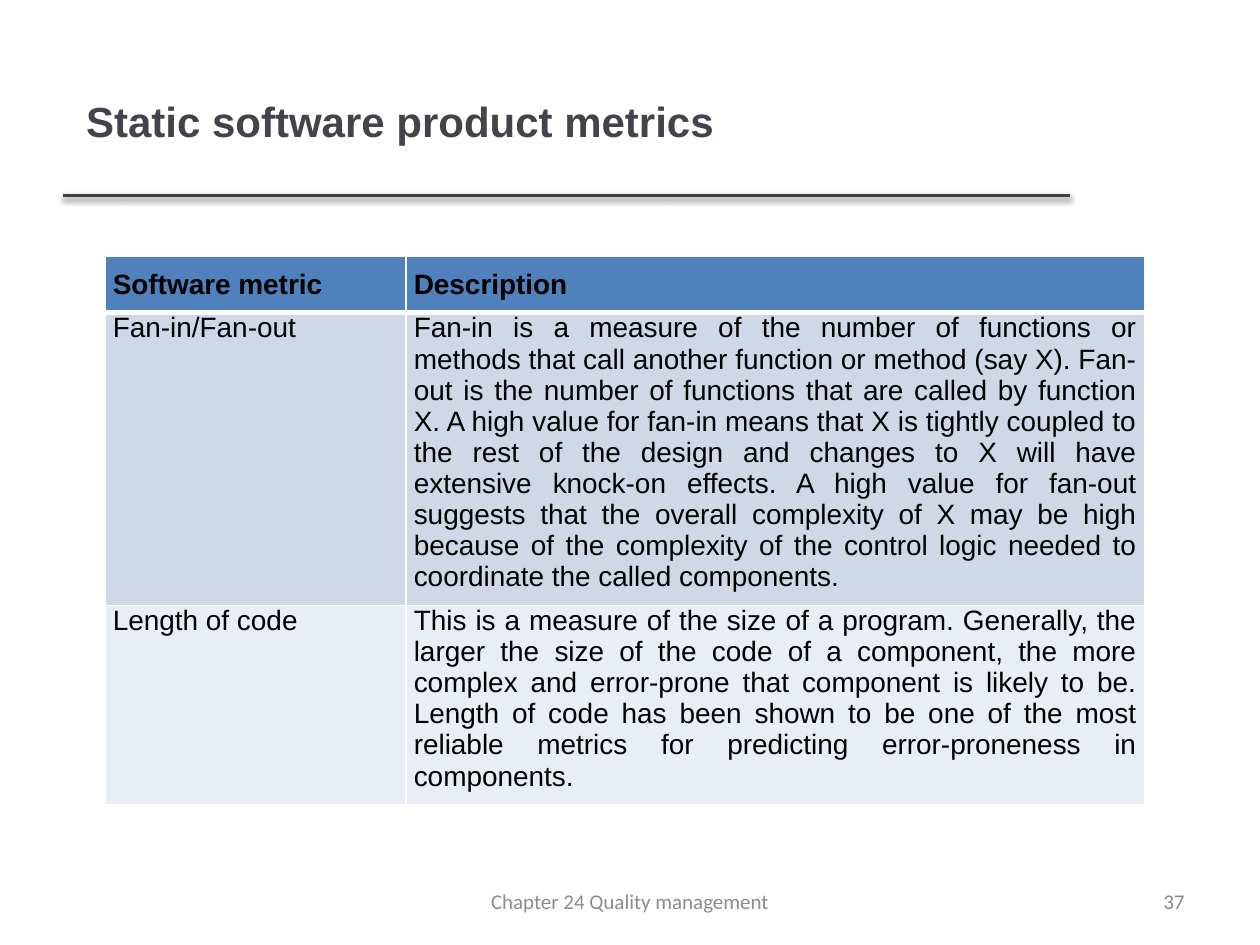
from lxml.etree import SubElement
from pptx import Presentation
from pptx.dml.color import RGBColor
from pptx.enum.shapes import MSO_CONNECTOR as Connector
from pptx.enum.text import MSO_ANCHOR as Anchor, PP_ALIGN as Align
from pptx.oxml.ns import qn
from pptx.util import Pt


def color(code):
    return RGBColor.from_string(code)


class SlideBuilder:
    """Holds the style and the slide, and adds each kind of element."""

    font = "Arial"
    footer_font = "Calibri"
    ink = "000000"
    title_ink = "46424D"
    footer_ink = "8C8C8C"
    rule_ink = "404040"
    border = "FFFFFF"
    row_fills = ("4F81BD", "D0D8E8", "E9EDF4")

    def __init__(self, deck):
        self.slide = deck.slides.add_slide(deck.slide_layouts[5])

    def add_text(self, frame, text, size, font, ink, align, bold=False):
        frame.word_wrap = True
        para = frame.paragraphs[0]
        para.alignment = align
        span = para.add_run()
        span.text = text
        span.font.size = Pt(size)
        span.font.name = font
        span.font.bold = bold
        span.font.color.rgb = color(ink)

    def title(self, text, left, top, width, height):
        box = self.slide.shapes.title
        box.left, box.top, box.width, box.height = map(Pt, (left, top, width, height))
        box.text_frame.vertical_anchor = Anchor.MIDDLE
        self.add_text(box.text_frame, text, 24, self.font, self.title_ink, Align.LEFT, True)

    def rule(self, left, right, top):
        line = self.slide.shapes.add_connector(
            Connector.STRAIGHT, Pt(left), Pt(top), Pt(right), Pt(top))
        line.line.width = Pt(2)
        line.line.color.rgb = color(self.rule_ink)
        effects = SubElement(line._element.spPr, qn("a:effectLst"))
        shadow = SubElement(effects, qn("a:outerShdw"), blurRad=str(Pt(3.1)),
                            dist=str(Pt(1.6)), dir="5400000", rotWithShape="0")
        ink = SubElement(shadow, qn("a:srgbClr"), val="000000")
        SubElement(ink, qn("a:alpha"), val="38000")

    def footer(self, text, left, width, align):
        box = self.slide.shapes.add_textbox(Pt(left), Pt(500.5), Pt(width), Pt(28.75))
        box.text_frame.vertical_anchor = Anchor.MIDDLE
        self.add_text(box.text_frame, text, 12, self.footer_font, self.footer_ink, align)

    def cell_borders(self, cell, bottom):
        properties = cell._tc.get_or_add_tcPr()
        for side, width in (("L", 1), ("R", 1), ("T", 1), ("B", bottom)):
            edge = SubElement(properties, qn(f"a:ln{side}"), w=str(Pt(width)))
            fill = SubElement(edge, qn("a:solidFill"))
            SubElement(fill, qn("a:srgbClr"), val=self.border)

    def table(self, rows, left, top, widths, heights):
        table = self.slide.shapes.add_table(
            len(rows), len(widths), Pt(left), Pt(top), Pt(sum(widths)), Pt(sum(heights))).table
        for column, width in zip(table.columns, widths):
            column.width = Pt(width)
        for r, texts in enumerate(rows):
            table.rows[r].height = Pt(heights[r])
            header = r == 0
            for c, text in enumerate(texts):
                cell = table.cell(r, c)
                cell.margin_left = cell.margin_right = Pt(4.5)
                cell.margin_top = Pt(7.2 if header else 0)
                cell.margin_bottom = Pt(7.2)
                self.cell_borders(cell, 3 if header else 1)
                cell.fill.solid()
                cell.fill.fore_color.rgb = color(self.row_fills[r])
                align = Align.JUSTIFY if header or c else Align.LEFT
                self.add_text(cell.text_frame, text, 16, self.font, self.ink, align, header)


METRICS = (
    ("Software metric", "Description"),
    ("Fan-in/Fan-out",
     "Fan-in is a measure of the number of functions or methods that call another function "
     "or method (say X). Fan-out is the number of functions that are called by function X. "
     "A high value for fan-in means that X is tightly coupled to the rest of the design and "
     "changes to X will have extensive knock-on effects. A high value for fan-out suggests "
     "that the overall complexity of X may be high because of the complexity of the control "
     "logic needed to coordinate the called components."),
    ("Length of code",
     "This is a measure of the size of a program. Generally, the larger the size of the code "
     "of a component, the more complex and error-prone that component is likely to be. Length "
     "of code has been shown to be one of the most reliable metrics for predicting "
     "error-proneness in components."),
)


def main():
    deck = Presentation()
    deck.slide_width, deck.slide_height = Pt(720), Pt(540)
    page = SlideBuilder(deck)
    page.rule(36, 611.5, 111.6)
    page.title("Static software product metrics", 42, 30, 570, 78)
    page.table(METRICS, 60, 146.5, (172, 422), (31.5, 167, 114))
    page.footer("37", 516, 168, Align.RIGHT)
    page.footer("Chapter 24 Quality management", 246, 228, Align.CENTER)
    deck.save("out.pptx")


if __name__ == "__main__":
    main()
